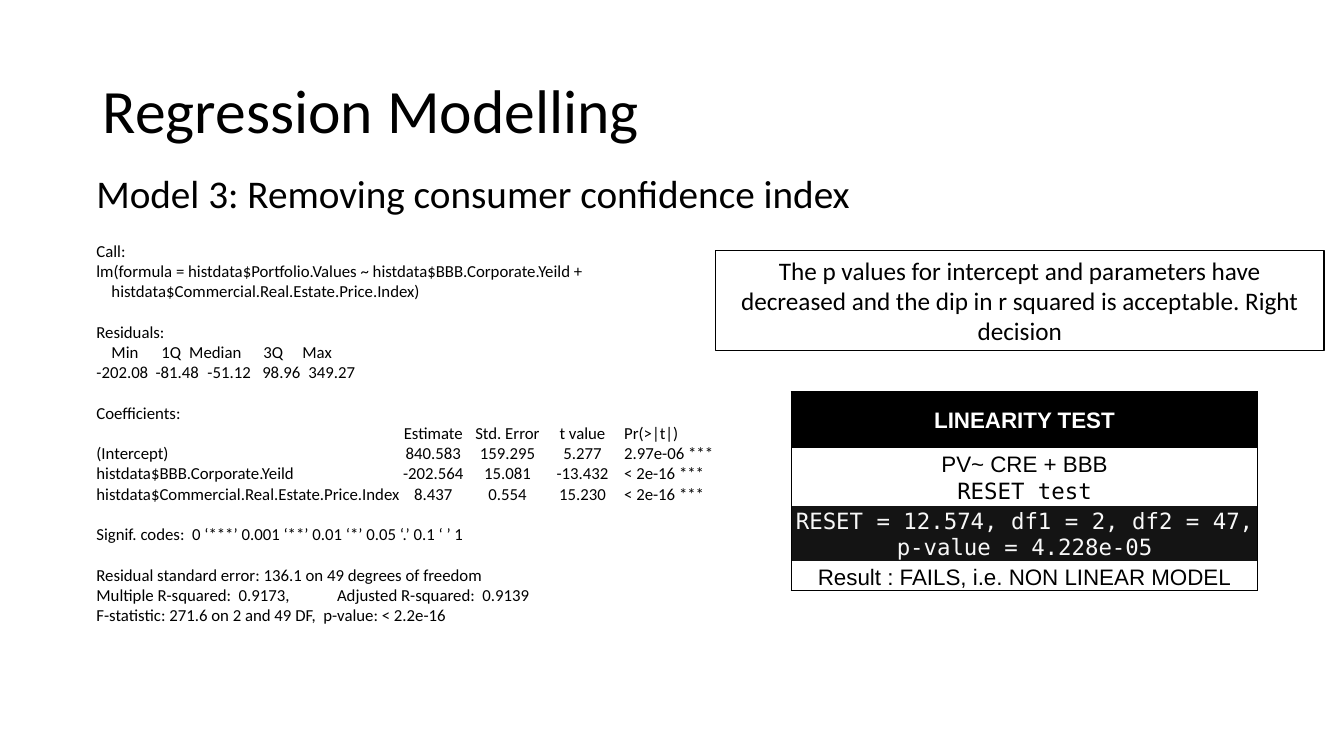
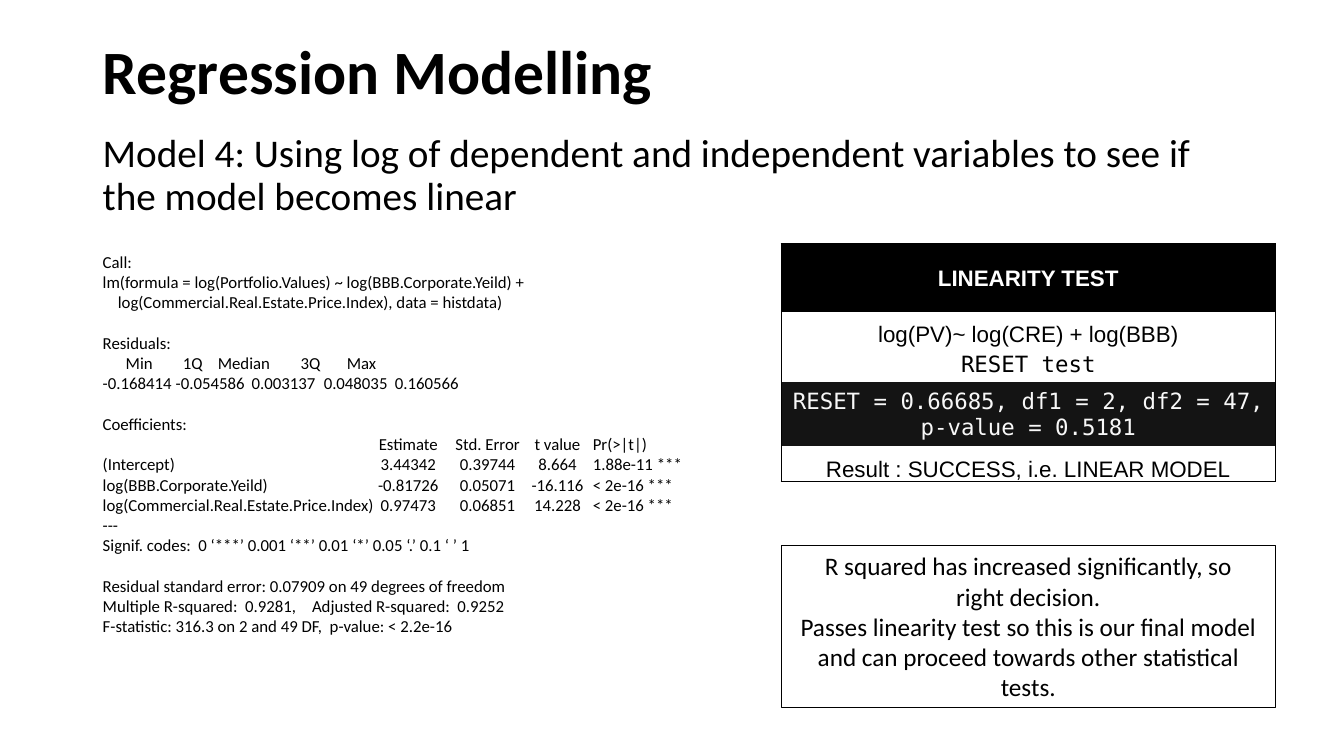
"""Build two slides that compare regression models and their linearity tests."""
from lxml.etree import SubElement
from pptx import Presentation
from pptx.dml.color import RGBColor
from pptx.enum.shapes import MSO_SHAPE as Shape
from pptx.enum.text import MSO_ANCHOR as Anchor, PP_ALIGN as Align
from pptx.oxml.ns import qn
from pptx.util import Cm, Pt

COLORS = {
    "ink": "000000",
    "paper": "FFFFFF",
    "result_fill": "141414",
    "result_text": "F8F8F8",
}
TITLE_FONT = {"name": "Calibri", "size": Pt(44)}
SUBTITLE_FONT = {"name": "Calibri", "size": Pt(28)}
REPORT_FONT = {"name": "Calibri", "size": Pt(12)}
COMMENT_FONT = {"name": "Calibri", "size": Pt(18)}
SANS_FONT = {"name": "Arial", "size": Pt(16), "bold": False}
HEADER_FONT = {**SANS_FONT, "bold": True}
MONO_FONT = {**SANS_FONT, "name": "DejaVu Sans Mono"}
HEADING = {"alignment": Align.LEFT, "line_spacing": 0.9}
CENTERED = {"alignment": Align.CENTER}
LEFT_ALIGNED = {"alignment": Align.LEFT}
CELL_MARGINS = {
    "margin_left": Cm(0.03),
    "margin_right": Cm(0.03),
    "margin_top": Cm(0.03),
    "margin_bottom": 0,
}
TABLE_ROWS = [
    (HEADER_FONT, "paper", "ink", Anchor.MIDDLE),
    (SANS_FONT, "ink", None, Anchor.BOTTOM),
    (MONO_FONT, "ink", None, Anchor.MIDDLE),
    (MONO_FONT, "result_text", "result_fill", Anchor.MIDDLE),
    (SANS_FONT, "ink", None, Anchor.BOTTOM),
]
SIGNIFICANCE = ("Signif. codes:  0 ‘***’ 0.001 ‘**’ 0.01 ‘*’ 0.05 ‘.’ 0.1 ‘ ’ 1", "plain")
COEFFICIENT_HEADER = ("\tEstimate\tStd. Error\tt value\tPr(>|t|)", "coefficients")
BLANK_LINE = Pt(14.65)
CONTINUATION_INDENT = Cm(0.38)

MODELS = [
    {
        "title_top": 1.02,
        "title_bold": False,
        "subtitle": "Model 3: Removing consumer confidence index",
        "subtitle_box": (2.18, 4.27, 29.21, 1.6),
        "report_box": (2.18, 5.94, 27.48, 12.32),
        "tabs": {
            "quantile_names": [(0.38, "l"), (1.64, "l"), (2.34, "l"), (4.21, "l"), (5.19, "l")],
            "quantiles": [(1.49, "l"), (2.8, "l"), (4.18, "l"), (5.34, "l")],
            "coefficients": [(8.49, "ctr"), (10.36, "ctr"), (12.25, "ctr"), (13.3, "l")],
        },
        "report": [
            [
                ("Call:", "plain"),
                ("lm(formula = histdata$Portfolio.Values ~ histdata$BBB.Corporate.Yeild +", "plain"),
                ("histdata$Commercial.Real.Estate.Price.Index)", "continuation"),
            ],
            [
                ("Residuals:", "plain"),
                ("\tMin\t1Q\tMedian\t3Q\tMax", "quantile_names"),
                ("-202.08\t-81.48\t-51.12\t98.96\t349.27", "quantiles"),
            ],
            [
                ("Coefficients:", "plain"),
                COEFFICIENT_HEADER,
                ("(Intercept)\t840.583\t159.295\t5.277\t2.97e-06 ***", "coefficients"),
                ("histdata$BBB.Corporate.Yeild\t-202.564\t15.081\t-13.432\t< 2e-16 ***", "coefficients"),
                ("histdata$Commercial.Real.Estate.Price.Index\t8.437\t0.554\t15.230\t< 2e-16 ***", "coefficients"),
            ],
            [SIGNIFICANCE],
            [
                ("Residual standard error: 136.1 on 49 degrees of freedom", "plain"),
                ("Multiple R-squared:  0.9173,\tAdjusted R-squared:  0.9139", "plain"),
                ("F-statistic: 271.6 on 2 and 49 DF,  p-value: < 2.2e-16", "plain"),
            ],
        ],
        "comment": "The p values for intercept and parameters have decreased and "
                   "the dip in r squared is acceptable. Right decision",
        "comment_box": (18.03, 6.32, 15.34, 2.51),
        "table_box": (19.94, 9.88, 11.76, 4.9),
        "row_heights": [1.4, 0.74, 0.74, 1.3, 0.74],
        "test": [
            "LINEARITY TEST",
            "PV~ CRE + BBB",
            "RESET test",
            "RESET = 12.574, df1 = 2, df2 = 47,\np-value = 4.228e-05",
            "Result : FAILS, i.e. NON LINEAR MODEL",
        ],
    },
    {
        "title_top": 0.05,
        "title_bold": True,
        "subtitle": "Model 4: Using log of dependent and independent variables "
                    "to see if the model becomes linear",
        "subtitle_box": (2.34, 3.25, 29.21, 2.6),
        "report_box": (2.34, 6.22, 31.29, 10.01),
        "tabs": {
            "quantile_names": [(0.58, "l"), (2.02, "l"), (2.9, "l"), (4.99, "l"), (6.15, "l")],
            "quantiles": [(1.84, "l"), (3.75, "l"), (5.57, "l"), (7.36, "l")],
            "coefficients": [(7.7, "ctr"), (9.7, "ctr"), (11.46, "ctr"), (12.35, "l")],
        },
        "report": [
            [
                ("Call:", "plain"),
                ("lm(formula = log(Portfolio.Values) ~ log(BBB.Corporate.Yeild) +", "plain"),
                ("log(Commercial.Real.Estate.Price.Index), data = histdata)", "continuation"),
            ],
            [
                ("Residuals:", "plain"),
                ("\tMin\t1Q\tMedian\t3Q\tMax", "quantile_names"),
                ("-0.168414\t-0.054586\t0.003137\t0.048035\t0.160566", "quantiles"),
            ],
            [
                ("Coefficients:", "plain"),
                COEFFICIENT_HEADER,
                ("(Intercept)\t3.44342\t0.39744\t8.664\t1.88e-11 ***", "coefficients"),
                ("log(BBB.Corporate.Yeild)\t-0.81726\t0.05071\t-16.116\t< 2e-16 ***", "coefficients"),
                ("log(Commercial.Real.Estate.Price.Index)\t0.97473\t0.06851\t14.228\t< 2e-16 ***", "coefficients"),
                ("---", "plain"),
                SIGNIFICANCE,
            ],
            [
                ("Residual standard error: 0.07909 on 49 degrees of freedom", "plain"),
                ("Multiple R-squared:  0.9281,\tAdjusted R-squared:  0.9252", "plain"),
                ("F-statistic: 316.3 on 2 and 49 DF,  p-value: < 2.2e-16", "plain"),
            ],
        ],
        "comment": "R squared has increased significantly, so right decision.\n"
                   "Passes linearity test so this is our final model and can "
                   "proceed towards other statistical tests.",
        "comment_box": (19.69, 13.74, 12.45, 4.09),
        "table_box": (19.69, 6.15, 12.45, 5.97),
        "row_heights": [1.7, 0.89, 0.89, 1.6, 0.91],
        "test": [
            "LINEARITY TEST",
            "log(PV)~ log(CRE) + log(BBB)",
            "RESET test",
            "RESET = 0.66685, df1 = 2, df2 = 47,\np-value = 0.5181",
            "Result : SUCCESS, i.e. LINEAR MODEL",
        ],
    },
]


def write_text(frame, text, font_format, paragraph_format, color="ink"):
    """Fill a text frame and format all its paragraphs."""
    frame.text = text
    frame.word_wrap = True
    for paragraph in frame.paragraphs:
        for name, value in paragraph_format.items():
            setattr(paragraph, name, value)
        for run in paragraph.runs:
            for name, value in font_format.items():
                setattr(run.font, name, value)
            run.font.color.rgb = RGBColor.from_string(COLORS[color])


def set_borders(cell, widths):
    """Draw the cell sides named in widths, in points, and clear the rest."""
    properties = cell._tc.get_or_add_tcPr()
    for position, side in enumerate("LRTB"):
        width = widths.get(side, 0)
        line = SubElement(properties, qn(f"a:ln{side}"), w=str(Pt(width)))
        if width:
            fill = SubElement(line, qn("a:solidFill"))
            SubElement(fill, qn("a:srgbClr"), val=COLORS["ink"])
        else:
            SubElement(line, qn("a:noFill"))
        properties.insert(position, line)


presentation = Presentation()
presentation.slide_width = Cm(33.87)
presentation.slide_height = Cm(19.05)

for model in MODELS:
    slide = presentation.slides.add_slide(presentation.slide_layouts[5])
    title = slide.shapes.title
    title_box = {"left": 2.34, "top": model["title_top"], "width": 29.21, "height": 3.68}
    for name, value in title_box.items():
        setattr(title, name, Cm(value))
    title.text_frame.vertical_anchor = Anchor.MIDDLE
    title_font = {**TITLE_FONT, "bold": model["title_bold"]}
    write_text(title.text_frame, "Regression Modelling", title_font, HEADING)

    subtitle = slide.shapes.add_textbox(*map(Cm, model["subtitle_box"]))
    write_text(subtitle.text_frame, model["subtitle"], SUBTITLE_FONT, HEADING)

    report = slide.shapes.add_textbox(*map(Cm, model["report_box"]))
    lines = [line for block in model["report"] for line in block]
    report_text = "\n".join(text for text, kind in lines)
    write_text(report.text_frame, report_text, REPORT_FONT, LEFT_ALIGNED)
    block_starts = [block[0] for block in model["report"][1:]]
    for paragraph, line in zip(report.text_frame.paragraphs, lines):
        properties = paragraph._p.get_or_add_pPr()
        if line in block_starts:
            paragraph.space_before = BLANK_LINE
        if line[1] == "continuation":
            properties.set("marL", str(CONTINUATION_INDENT))
        if line[1] in model["tabs"]:
            tab_list = SubElement(properties, qn("a:tabLst"))
            for position, alignment in model["tabs"][line[1]]:
                SubElement(tab_list, qn("a:tab"), pos=str(Cm(position)), algn=alignment)

    comment = slide.shapes.add_shape(Shape.RECTANGLE, *map(Cm, model["comment_box"]))
    comment.shadow.inherit = False
    comment.fill.background()
    comment.line.color.rgb = RGBColor.from_string(COLORS["ink"])
    comment.line.width = Pt(1)
    comment.text_frame.vertical_anchor = Anchor.MIDDLE
    comment.text_frame.margin_left = comment.text_frame.margin_right = Cm(0.45)
    write_text(comment.text_frame, model["comment"], COMMENT_FONT, CENTERED)

    table = slide.shapes.add_table(len(TABLE_ROWS), 1, *map(Cm, model["table_box"])).table
    table.first_row = table.horz_banding = False
    last = len(TABLE_ROWS) - 1
    for index, (font_format, text_color, fill_color, anchor) in enumerate(TABLE_ROWS):
        table.rows[index].height = Cm(model["row_heights"][index])
        cell = table.cell(index, 0)
        for name, value in CELL_MARGINS.items():
            setattr(cell, name, value)
        cell.vertical_anchor = anchor
        write_text(cell.text_frame, model["test"][index], font_format, CENTERED, text_color)
        if fill_color:
            cell.fill.solid()
            cell.fill.fore_color.rgb = RGBColor.from_string(COLORS[fill_color])
        else:
            cell.fill.background()
        set_borders(cell, {"L": 1, "R": 1, "T": int(index == 0), "B": int(index == last)})

presentation.save("out.pptx")
